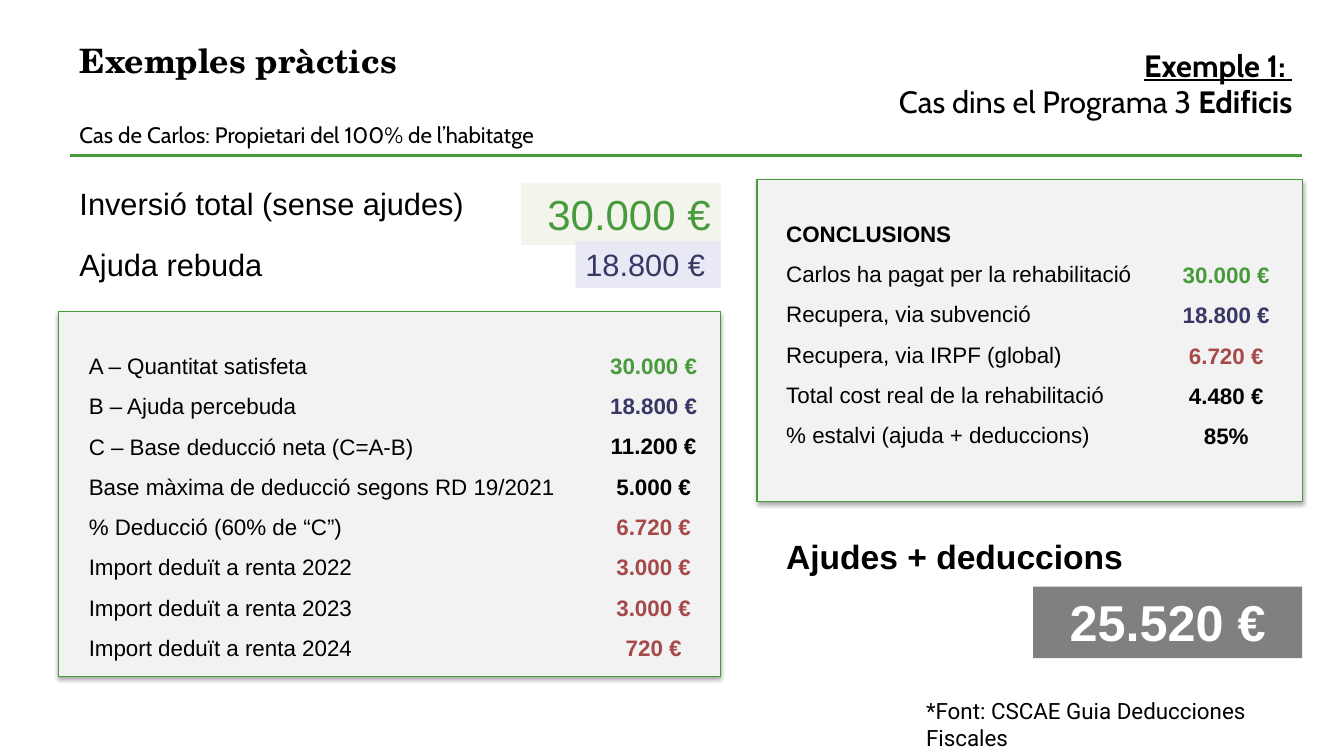
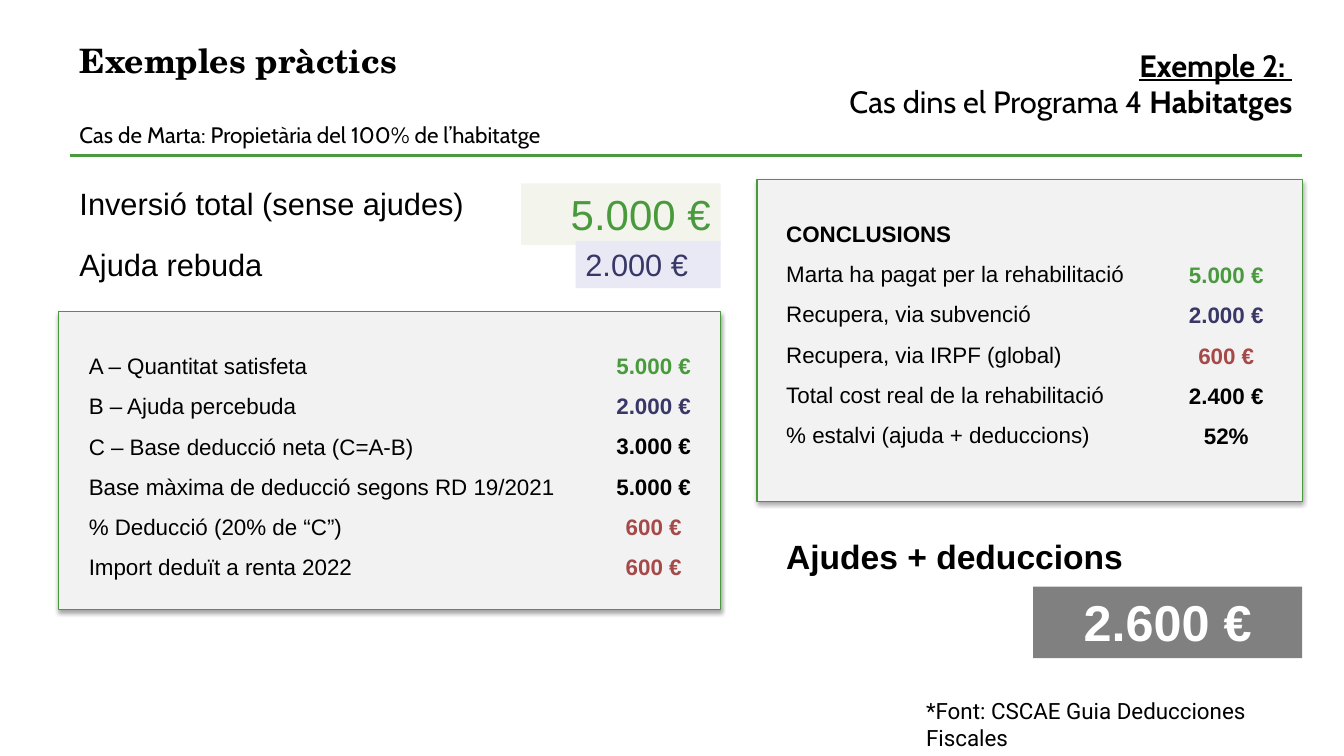
import dataclasses
import typing

import lxml.etree
import pptx
import pptx.dml.color
import pptx.enum.shapes
import pptx.enum.text
import pptx.oxml
import pptx.oxml.ns
import pptx.util

Pt = pptx.util.Pt
ALIGN = pptx.enum.text.PP_ALIGN
ANCHOR = pptx.enum.text.MSO_ANCHOR
AUTO_SIZE = pptx.enum.text.MSO_AUTO_SIZE

BLACK, WHITE = "000000", "FFFFFF"
GREEN, INDIGO, RED = "499A3D", "383766", "A54949"
PALE_GREEN, PALE_INDIGO = "F3F5ED", "E8E9F5"
PANEL_GREY, TOTAL_GREY = "F2F2F2", "808080"

LEFT, RIGHT = 49.7, 930.2
LEFT_PANEL_EDGE, LEFT_PANEL_END = 41.8, 514.8
RIGHT_PANEL_EDGE, RIGHT_TEXT = 540.7, 554.4
ROW_HEIGHT, INSETS = 28.5, 7.2
AMOUNT_WIDTH = 95.8
YEARLY_BASE_LIMIT = 5000
FIRST_YEAR = 2022


class Area(typing.NamedTuple):
    left: float
    top: float
    width: float
    height: float


class Span(typing.NamedTuple):
    text: str
    color: str = BLACK
    bold: bool = False
    underline: bool = False


class Entry(typing.NamedTuple):
    label: str
    amount: str
    color: str = BLACK


@dataclasses.dataclass(frozen=True)
class Style:
    font: str
    size: float
    align: ALIGN = ALIGN.LEFT
    spacing: float = 1.0
    after: float = 0
    anchor: ANCHOR = ANCHOR.TOP
    grow: bool = True


@dataclasses.dataclass(frozen=True)
class Case:
    number: int
    programme: str
    scope: str
    owner: str
    role: str
    paid: int
    aid: int
    rate: int
    panel_height: float

    @property
    def base(self) -> int:
        return self.paid - self.aid

    @property
    def deduction(self) -> int:
        return self.base * self.rate // 100

    @property
    def recovered(self) -> int:
        return self.aid + self.deduction

    def yearly_deductions(self) -> list[int]:
        """Spread the deduction over years, up to the yearly limit."""
        limit = YEARLY_BASE_LIMIT * self.rate // 100
        return [min(limit, self.deduction - used) for used in range(0, self.deduction, limit)]

    def breakdown(self) -> list[Entry]:
        return [
            Entry("A – Quantitat satisfeta", euros(self.paid), GREEN),
            Entry("B – Ajuda percebuda", euros(self.aid), INDIGO),
            Entry("C – Base deducció neta (C=A-B)", euros(self.base)),
            Entry("Base màxima de deducció segons RD 19/2021", euros(YEARLY_BASE_LIMIT)),
            Entry(f"% Deducció ({self.rate}% de “C”)", euros(self.deduction), RED),
        ] + [
            Entry(f"Import deduït a renta {year}", euros(amount), RED)
            for year, amount in enumerate(self.yearly_deductions(), FIRST_YEAR)
        ]

    def conclusions(self) -> list[Entry]:
        return [
            Entry(f"{self.owner} ha pagat per la rehabilitació", euros(self.paid), GREEN),
            Entry("Recupera, via subvenció", euros(self.aid), INDIGO),
            Entry("Recupera, via IRPF (global)", euros(self.deduction), RED),
            Entry("Total cost real de la rehabilitació", euros(self.paid - self.recovered)),
            Entry("% estalvi (ajuda + deduccions)", f"{100 * self.recovered / self.paid:.0f}%"),
        ]


TITLE = Style("TeX Gyre Schola", 24, anchor=ANCHOR.MIDDLE, grow=False)
EXAMPLE = Style("Cabin", 22, ALIGN.RIGHT)
OWNER = Style("Cabin", 16, spacing=1.07, after=8)
FIGURE = Style("Arial", 22)
INVESTMENT = Style("Arial", 30, ALIGN.RIGHT)
LABELS = Style("Arial", 16, spacing=1.5)
AMOUNTS = Style("Arial", 16, ALIGN.CENTER, spacing=1.5)
HEADING = Style("Arial", 24)
TOTAL = Style("Arial", 36, ALIGN.CENTER)
SOURCE = Style("Roboto", 16)

CASES = [
    Case(1, "Programa 3", "Edificis", "Carlos", "Propietari", 30000, 18800, 60, 260.6),
    Case(2, "Programa 4", "Habitatges", "Marta", "Propietària", 5000, 2000, 20, 213.1),
]


def euros(amount: int) -> str:
    return f"{amount:,} €".replace(",", ".")


def rgb(color: str) -> pptx.dml.color.RGBColor:
    return pptx.dml.color.RGBColor.from_string(color)


def apply(target, values: dict) -> None:
    for name, value in values.items():
        setattr(target, name, value)


def paint(shape, color: str) -> None:
    shape.fill.solid()
    shape.fill.fore_color.rgb = rgb(color)


def write(shape, lines: list[list[Span]], style: Style) -> None:
    frame = shape.text_frame
    apply(frame, {
        "word_wrap": True,
        "vertical_anchor": style.anchor,
        "auto_size": AUTO_SIZE.SHAPE_TO_FIT_TEXT if style.grow else AUTO_SIZE.NONE,
    })
    for index, spans in enumerate(lines):
        paragraph = frame.add_paragraph() if index else frame.paragraphs[0]
        if shape.is_placeholder:
            properties = paragraph._p.get_or_add_pPr()
            apply_indent = {"marL": "0", "indent": "0"}
            for name, value in apply_indent.items():
                properties.set(name, value)
            lxml.etree.SubElement(properties, pptx.oxml.ns.qn("a:buNone"))
        apply(paragraph, {
            "alignment": style.align,
            "line_spacing": style.spacing,
            "space_before": Pt(0),
            "space_after": Pt(style.after),
        })
        for span in spans:
            run = paragraph.add_run()
            run.text = span.text
            apply(run.font, {
                "name": style.font,
                "size": Pt(style.size),
                "bold": span.bold,
                "underline": span.underline,
            })
            run.font.color.rgb = rgb(span.color)


def add_text(slide, area: Area, lines: list[list[Span]], style: Style, fill: str = "") -> None:
    box = slide.shapes.add_textbox(*map(Pt, area))
    if fill:
        paint(box, fill)
    write(box, lines, style)


def fill_placeholder(placeholder, area: Area, lines: list[list[Span]], style: Style) -> None:
    """Place and fill a placeholder, bringing it in front of what is already drawn."""
    apply(placeholder, dict(zip(Area._fields, map(Pt, area))))
    write(placeholder, lines, style)
    placeholder.element.getparent().append(placeholder.element)


def add_panel(slide, area: Area) -> None:
    panel = slide.shapes.add_shape(pptx.enum.shapes.MSO_SHAPE.RECTANGLE, *map(Pt, area))
    paint(panel, PANEL_GREY)
    panel.line.color.rgb = rgb(GREEN)
    panel.line.width = Pt(0.75)
    panel.element.spPr.append(pptx.oxml.parse_xml(
        f'<a:effectLst {pptx.oxml.ns.nsdecls("a")}>'
        f'<a:outerShdw blurRad="{Pt(3.1)}" dist="{Pt(1.8)}" dir="5400000" rotWithShape="0">'
        '<a:srgbClr val="000000"><a:alpha val="35000"/></a:srgbClr>'
        '</a:outerShdw></a:effectLst>'))


def add_rule(slide) -> None:
    rule = slide.shapes.add_connector(
        pptx.enum.shapes.MSO_CONNECTOR.STRAIGHT, Pt(LEFT), Pt(111), Pt(RIGHT), Pt(111))
    rule.line.color.rgb = rgb(GREEN)
    rule.line.width = Pt(2)
    lxml.etree.SubElement(rule.element.spPr, pptx.oxml.ns.qn("a:effectLst"))


def add_ledger(slide, labels, corner: tuple[float, float], width: float,
               amount_left: float, entries: list[Entry], heading: str = "") -> None:
    """Labels in a body placeholder, with the amounts in a column beside them."""
    left, top = corner
    lines = [[Span(heading, bold=True)]] if heading else []
    amount_top = top + ROW_HEIGHT * len(lines) + (1 if heading else 0)
    lines += [[Span(entry.label)] for entry in entries]
    fill_placeholder(labels, Area(left, top, width, len(lines) * ROW_HEIGHT + INSETS), lines, LABELS)
    add_text(slide, Area(amount_left, amount_top, AMOUNT_WIDTH, len(entries) * ROW_HEIGHT + INSETS),
             [[Span(entry.amount, entry.color, True)] for entry in entries], AMOUNTS)


def add_header(slide, case: Case) -> None:
    fill_placeholder(slide.shapes.title, Area(LEFT, 21, 652, 44),
                     [[Span("Exemples pràctics", bold=True)]], TITLE)
    add_text(slide, Area(RIGHT - 450, 29.5, 450, 60.5), [
        [Span(f"Exemple {case.number}: ", bold=True, underline=True)],
        [Span(f"Cas dins el {case.programme} "), Span(case.scope, bold=True)],
    ], EXAMPLE)
    add_text(slide, Area(LEFT, 81.4, 511, 26.6),
             [[Span(f"Cas de {case.owner}: {case.role} del 100% de l’habitatge")]], OWNER)
    add_rule(slide)


def add_case(presentation, case: Case) -> None:
    slide = presentation.slides.add_slide(presentation.slide_layouts.get_by_name("Two Content"))
    breakdown, conclusions = slide.placeholders[1], slide.placeholders[2]
    add_text(slide, Area(RIGHT - 275.8, 494.6, 275.8, 26.6),
             [[Span("*Font: CSCAE Guia Deducciones Fiscales")]], SOURCE, WHITE)
    add_header(slide, case)

    add_text(slide, Area(LEFT, 128.2, 336, 33.8), [[Span("Inversió total (sense ajudes)")]], FIGURE)
    add_text(slide, Area(LEFT_PANEL_END - 142.6, 131, 142.6, 43.9),
             [[Span(euros(case.paid), GREEN)]], INVESTMENT, PALE_GREEN)
    add_text(slide, Area(LEFT, 172, 336, 33.8), [[Span("Ajuda rebuda")]], FIGURE)
    add_text(slide, Area(LEFT_PANEL_END - 103.7, 172, 103.7, 33.8),
             [[Span(euros(case.aid), INDIGO)]], FIGURE, PALE_INDIGO)

    add_panel(slide, Area(LEFT_PANEL_EDGE, 222.5, LEFT_PANEL_END - LEFT_PANEL_EDGE, case.panel_height))
    add_ledger(slide, breakdown, (56.2, 238.3), 390, LEFT_PANEL_END - AMOUNT_WIDTH, case.breakdown())
    add_panel(slide, Area(RIGHT_PANEL_EDGE, 128.2, RIGHT - RIGHT_PANEL_EDGE, 229.7))
    add_ledger(slide, conclusions, (RIGHT_TEXT, 144), 390, 828, case.conclusions(), "CONCLUSIONS")

    add_text(slide, Area(RIGHT_TEXT, 379.4, RIGHT - RIGHT_TEXT, 36),
             [[Span("Ajudes + deduccions", bold=True)]], HEADING)
    add_text(slide, Area(RIGHT - 192.2, 419, 192.2, 51.1),
             [[Span(euros(case.recovered), WHITE, True)]], TOTAL, TOTAL_GREY)


def main() -> None:
    presentation = pptx.Presentation()
    apply(presentation, {"slide_width": Pt(960), "slide_height": Pt(540)})
    for case in CASES:
        add_case(presentation, case)
    presentation.save("out.pptx")


if __name__ == "__main__":
    main()
